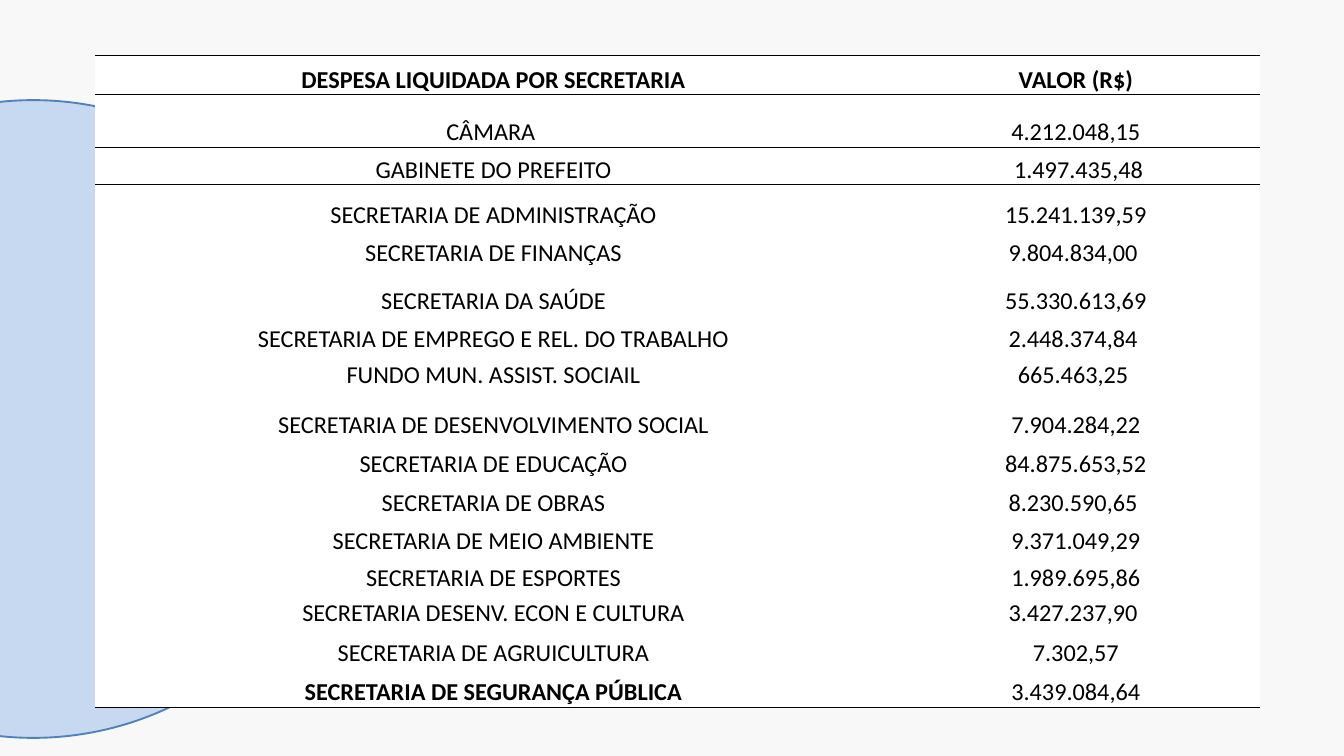
import pptx
import pptx.util
import pptx.dml.color
import pptx.enum.shapes
import pptx.enum.text
import pptx.oxml
import pptx.oxml.ns
from lxml import etree

Inches = pptx.util.Inches
Pt = pptx.util.Pt
RGBColor = pptx.dml.color.RGBColor

BACKGROUND = RGBColor(0xF8, 0xF8, 0xF8)
CIRCLE_FILL = RGBColor(0xC6, 0xD9, 0xF1)
CIRCLE_LINE = RGBColor(0x4F, 0x81, 0xBD)
BLACK = RGBColor(0, 0, 0)
WHITE = RGBColor(0xFF, 0xFF, 0xFF)

FONT = "Calibri"
NO_STYLE = "{2D5ABB26-0587-4C30-8999-92F81FD0307C}"
COLUMN_WIDTHS = (11.85, 5.48)
EXPENSES = (
    (0.59, "DESPESA LIQUIDADA POR SECRETARIA", "VALOR (R$)"),
    (0.78, "CÂMARA ", " 4.212.048,15 "),
    (0.56, "GABINETE DO PREFEITO", " 1.497.435,48"),
    (0.68, "SECRETARIA DE ADMINISTRAÇÃO", " 15.241.139,59 "),
    (0.56, "SECRETARIA DE FINANÇAS", "9.804.834,00 "),
    (0.72, "SECRETARIA DA SAÚDE", " 55.330.613,69 "),
    (0.56, "SECRETARIA DE EMPREGO E REL. DO TRABALHO", "2.448.374,84 "),
    (0.53, "FUNDO MUN. ASSIST. SOCIAIL", "665.463,25 "),
    (0.75, "SECRETARIA DE DESENVOLVIMENTO SOCIAL", " 7.904.284,22 "),
    (0.58, "SECRETARIA DE EDUCAÇÃO", "84.875.653,52"),
    (0.58, "SECRETARIA DE OBRAS", "8.230.590,65 "),
    (0.56, "SECRETARIA DE MEIO AMBIENTE", " 9.371.049,29 "),
    (0.56, "SECRETARIA DE ESPORTES", " 1.989.695,86 "),
    (0.52, "SECRETARIA DESENV. ECON E CULTURA", "3.427.237,90 "),
    (0.59, "SECRETARIA DE AGRUICULTURA", " 7.302,57 "),
    (0.59, "SECRETARIA DE SEGURANÇA PÚBLICA", " 3.439.084,64 "),
)
LAST = len(EXPENSES) - 1
TOP_RULES = {0: 1, 1: 1, 2: 1}
BOTTOM_RULES = {0: 1, 1: 1, LAST: 2}
BOLD_CELLS = {(0, 0), (0, 1), (LAST, 0)}


def add_circle(page, left, top, size):
    circle = page.shapes.add_shape(
        pptx.enum.shapes.MSO_SHAPE.OVAL,
        Inches(left), Inches(top), Inches(size), Inches(size))
    circle.shadow.inherit = False
    circle.fill.solid()
    circle.fill.fore_color.rgb = CIRCLE_FILL
    circle.line.color.rgb = CIRCLE_LINE
    circle.line.width = Pt(2)


def add_rule(cell, position, tag, width):
    rule = pptx.oxml.parse_xml(
        f'<a:{tag} {pptx.oxml.ns.nsdecls("a")} w="{Pt(width)}">'
        f'<a:solidFill><a:srgbClr val="{BLACK}"/></a:solidFill></a:{tag}>')
    cell._tc.get_or_add_tcPr().insert(position, rule)


def format_cell(cell, text, bold, top_rule, bottom_rule):
    cell.text_frame.text = text
    cell.vertical_anchor = pptx.enum.text.MSO_ANCHOR.BOTTOM
    cell.margin_left = cell.margin_right = cell.margin_top = Inches(0.01)
    cell.margin_bottom = 0
    cell.fill.solid()
    cell.fill.fore_color.rgb = WHITE
    para = cell.text_frame.paragraphs[0]
    para.alignment = pptx.enum.text.PP_ALIGN.CENTER
    for span in para.runs:
        span.font.name = FONT
        span.font.size = Pt(26)
        span.font.bold = bold
        span.font.color.rgb = BLACK
    rules = [("lnT", top_rule), ("lnB", bottom_rule)]
    drawn = [(tag, width) for tag, width in rules if width]
    for position, (tag, width) in enumerate(drawn):
        add_rule(cell, position, tag, width)


def add_expense_table(page, left, top, width, height):
    frame = page.shapes.add_table(
        len(EXPENSES), len(COLUMN_WIDTHS),
        Inches(left), Inches(top), Inches(width), Inches(height))
    table = frame.table
    table.first_row = False
    table.horz_banding = False
    table._tbl.tblPr.find(pptx.oxml.ns.qn("a:tableStyleId")).text = NO_STYLE
    for column, column_width in zip(table.columns, COLUMN_WIDTHS):
        column.width = Inches(column_width)
    for row, (row_height, *texts) in enumerate(EXPENSES):
        table.rows[row].height = Inches(row_height)
        for column, text in enumerate(texts):
            format_cell(table.cell(row, column), text, (row, column) in BOLD_CELLS,
                        TOP_RULES.get(row), BOTTOM_RULES.get(row))


def main():
    deck = pptx.Presentation()
    deck.slide_width = Inches(20)
    deck.slide_height = Inches(11.25)
    page = deck.slides.add_slide(deck.slide_layouts[6])
    page.background.fill.solid()
    page.background.fill.fore_color.rgb = BACKGROUND
    add_circle(page, -4.25, 1.49, 9.49)
    add_expense_table(page, 1.42, 0.82, sum(COLUMN_WIDTHS), 9.72)
    deck.save("out.pptx")


if __name__ == "__main__":
    main()
